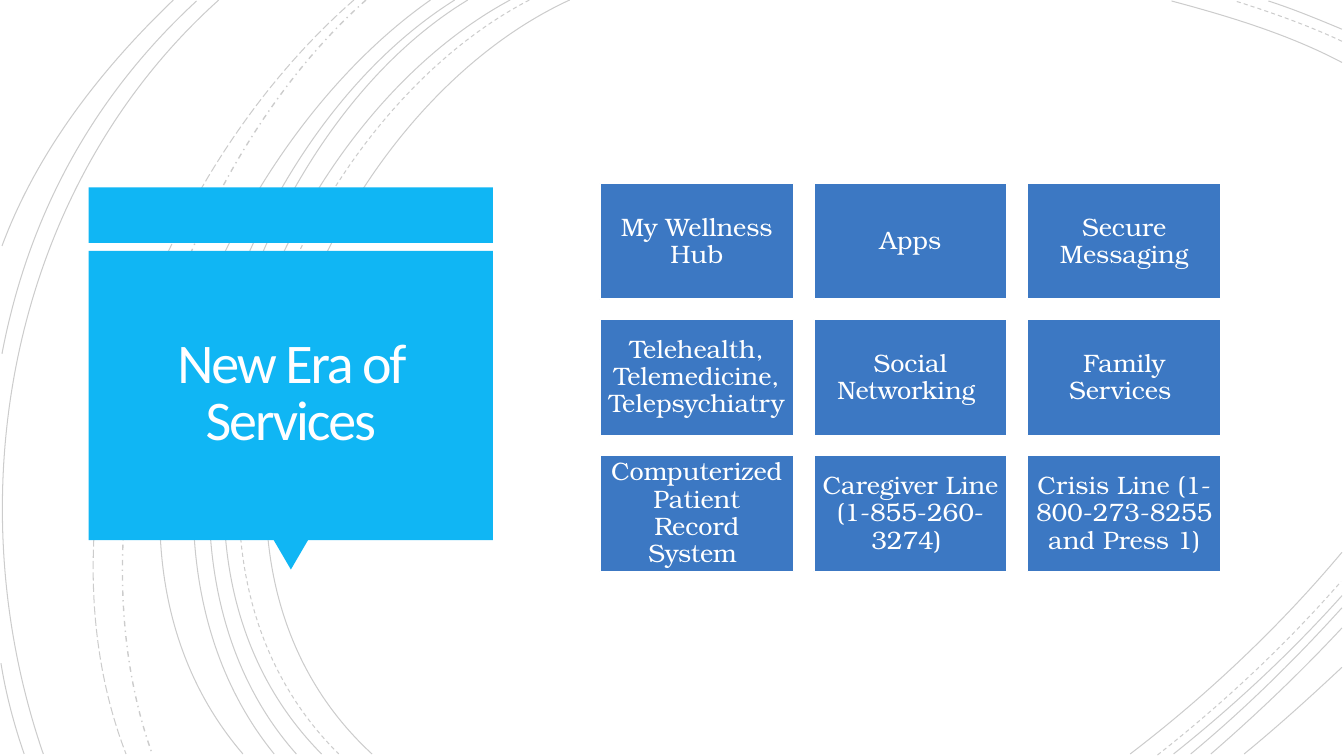
from lxml.etree import SubElement
from pptx import Presentation
from pptx.dml.color import RGBColor
from pptx.enum.dml import MSO_LINE
from pptx.enum.shapes import MSO_SHAPE
from pptx.enum.text import MSO_ANCHOR, PP_ALIGN
from pptx.oxml.ns import qn
from pptx.util import Inches, Pt

WIDTH, HEIGHT = 13.33, 7.5
WHITE, CYAN, BLUE, BLACK = "FFFFFF", "10B6F4", "3C78C3", "000000"
LINE_OPACITY = 20

TITLE = "New Era of Services"
SERVICES = [
    ["My Wellness Hub", "Apps", "Secure Messaging"],
    ["Telehealth, Telemedicine, Telepsychiatry", "Social Networking ", "Family Services "],
    ["Computerized Patient Record System ", "Caregiver Line (1-855-260-3274) ",
     "Crisis Line (1-800-273-8255 and Press 1)"],
]
GRID_LEFT, GRID_TOP = 5.95, 1.82
TILE_WIDTH, TILE_HEIGHT = 1.92, 1.15
COLUMN_STEP, ROW_STEP = 2.12, 1.35
TITLE_INSET, TILE_INSET = 18, 5.4

ARCS = [
    (MSO_LINE.SOLID, 0.75, [
        [(5.65, 0), (3.15, 1.15), (1.43, 5.4), (3.69, 7.48)],
        [(13.31, 0.62), (12.78, 0.34), (12.18, 0.16), (11.62, 0.01)],
        [(11.21, 7.48), (11.97, 6.9), (12.69, 6.22), (13.31, 5.48)],
        [(5.06, 0), (2.7, 1.27), (1.1, 5.37), (3.19, 7.48)],
        [(13.31, 0.29), (13.07, 0.19), (12.83, 0.09), (12.58, 0.01)],
        [(11.64, 7.48), (12.23, 7.01), (12.8, 6.48), (13.31, 5.91)],
        [(4.64, 0), (2.44, 1.33), (1.1, 5.41), (2.94, 7.48)],
        [(11.81, 7.48), (12.34, 7.04), (12.84, 6.55), (13.31, 6.03)],
        [(4.51, 0), (2.31, 1.38), (0.97, 5.33), (2.72, 7.48)],
        [(12.01, 7.48), (12.46, 7.09), (12.9, 6.67), (13.31, 6.23)],
        [(4.27, 0), (2.17, 1.47), (0.53, 5.29), (2.41, 7.48)],
        [(12.34, 7.48), (12.67, 7.21), (12.99, 6.92), (13.31, 6.62)],
        [(2.17, 0), (0.11, 1.85), (-0.46, 4.9), (0.43, 7.48)],
        [(1.95, 0.01), (0.92, 0.96), (0.28, 2.14), (0.02, 3.51)],
        [(0.01, 6.58), (0.06, 6.89), (0.14, 7.19), (0.24, 7.48)],
        [(1.72, 0), (1, 0.69), (0.37, 1.5), (0.02, 2.44)],
    ]),
    (MSO_LINE.DASH, 0.75, [
        [(5.25, 0), (2.85, 1.25), (1.23, 5.37), (3.36, 7.48)],
        [(13.31, 0.41), (12.97, 0.25), (12.6, 0.12), (12.25, 0.01)],
        [(11.48, 7.49), (12.13, 6.98), (12.75, 6.4), (13.3, 5.77)],
    ]),
    (MSO_LINE.DASH_DOT, 1, [[(3.63, 0), (1.76, 1.66), (0.65, 5.09), (1.51, 7.48)]]),
    (MSO_LINE.LONG_DASH, 0.75, [[(3.51, 0), (1.57, 1.69), (0.29, 4.99), (1.25, 7.48)]]),
]


def color(value):
    return RGBColor.from_string(value)


def bend(arc):
    outline = arc._element.find(".//" + qn("a:path"))
    segments = outline.findall(qn("a:lnTo"))
    curve = SubElement(outline, qn("a:cubicBezTo"))
    for segment in segments:
        curve.append(segment[0])
        outline.remove(segment)


def add_arc(page, controls, dash, weight):
    start, *rest = [(Inches(x), Inches(y)) for x, y in controls]
    builder = page.shapes.build_freeform(*start)
    builder.add_line_segments(rest, close=False)
    arc = builder.convert_to_shape()
    bend(arc)
    arc.shadow.inherit = False
    arc.fill.background()
    arc.line.color.rgb = color(BLACK)
    arc.line.width = Pt(weight)
    arc.line.dash_style = dash
    ink = arc._element.find(".//" + qn("a:ln")).find(".//" + qn("a:srgbClr"))
    SubElement(ink, qn("a:alpha"), val=str(LINE_OPACITY * 1000))


def add_block(page, kind, left, top, width, height, fill, outline=None):
    block = page.shapes.add_shape(kind, Inches(left), Inches(top), Inches(width), Inches(height))
    block.shadow.inherit = False
    block.fill.solid()
    block.fill.fore_color.rgb = color(fill)
    if outline:
        block.line.color.rgb = color(outline)
        block.line.width = Pt(1.25)
    else:
        block.line.fill.background()
    return block


def write(box, text, font, size, ink, inset, line_spacing):
    frame = box.text_frame
    frame.word_wrap = True
    frame.vertical_anchor = MSO_ANCHOR.MIDDLE
    frame.margin_left = frame.margin_right = Pt(inset)
    frame.margin_top = frame.margin_bottom = Pt(inset)
    para = frame.paragraphs[0]
    para.alignment = PP_ALIGN.CENTER
    para.line_spacing = line_spacing
    span = para.add_run()
    span.text = text
    span.font.name = font
    span.font.size = Pt(size)
    span.font.color.rgb = color(ink)
    return span


def main():
    deck = Presentation()
    deck.slide_width, deck.slide_height = Inches(WIDTH), Inches(HEIGHT)
    page = deck.slides.add_slide(deck.slide_layouts[6])

    for dash, weight, arcs in ARCS:
        for controls in arcs:
            add_arc(page, controls, dash, weight)

    add_block(page, MSO_SHAPE.RECTANGLE, 0.88, 1.86, 4.01, 0.55, CYAN)
    pointer = add_block(page, MSO_SHAPE.ISOSCELES_TRIANGLE, 2.71, 5.35, 0.35, 0.3, CYAN)
    pointer.rotation = 180
    add_block(page, MSO_SHAPE.RECTANGLE, 0.88, 2.49, 4.01, 2.87, CYAN)
    title = page.shapes.add_textbox(Inches(0.97), Inches(2.57), Inches(3.83), Inches(2.69))
    span = write(title, TITLE, "Calibri", 40, "FFFEFF", TITLE_INSET, 0.85)
    span.font._element.set("spc", "-150")

    for row, services in enumerate(SERVICES):
        for column, service in enumerate(services):
            tile = add_block(page, MSO_SHAPE.RECTANGLE,
                             GRID_LEFT + column * COLUMN_STEP, GRID_TOP + row * ROW_STEP,
                             TILE_WIDTH, TILE_HEIGHT, BLUE, WHITE)
            write(tile, service, "TeX Gyre Bonum", 18, WHITE, TILE_INSET, 0.9)

    deck.save("out.pptx")


if __name__ == "__main__":
    main()
